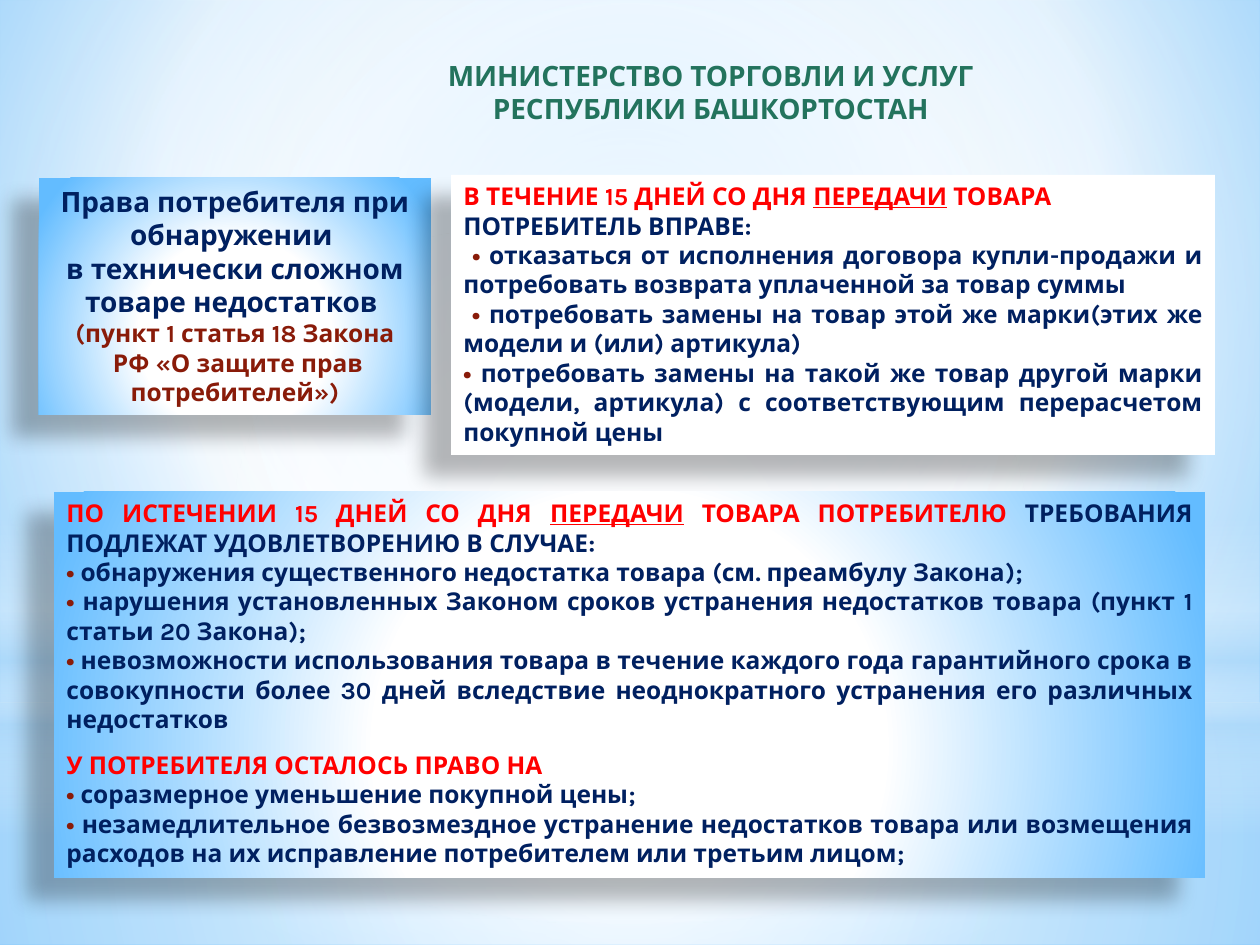
import pptx
import pptx.dml.color
import pptx.enum.shapes
import pptx.enum.text
import pptx.oxml
import pptx.oxml.ns
import pptx.util
from lxml import etree

PX = 914400 / 126
FONT = "Karla"
COLORS = {"white": "FFFFFF", "navy": "002060", "red": "FF0000", "brown": "891B09",
          "green": "23735D", "sky": "63BCFF", "mist": "B4DCFA",
          "bg_light": "9ED5FF", "bg_deep": "5BB9FF"}
ALIGN = pptx.enum.text.PP_ALIGN
SHAPE = pptx.enum.shapes.MSO_SHAPE
qn = pptx.oxml.ns.qn
CENTER = (50, 50, 50, 50)
PANEL_STOPS = [(0, "white", 100), (42, "white", 100), (100, "sky", 100)]
PANEL_FOCUS = (24, 44, 24, 12)


def px(n):
    return round(n * PX)


def rgb(name):
    return pptx.dml.color.RGBColor.from_string(COLORS[name])


def set_gradient(props, stops, focus=None):
    """Swap the empty fill for a gradient: circular around focus, else top to bottom."""
    grad = etree.Element(qn("a:gradFill"), rotWithShape="1")
    stop_list = etree.SubElement(grad, qn("a:gsLst"))
    for pos, color, opacity in stops:
        gs = etree.SubElement(stop_list, qn("a:gs"), pos=str(pos * 1000))
        clr = etree.SubElement(gs, qn("a:srgbClr"), val=COLORS[color])
        if opacity < 100:
            etree.SubElement(clr, qn("a:alpha"), val=str(opacity * 1000))
    if focus:
        circle = etree.SubElement(grad, qn("a:path"), path="circle")
        sides = {side: str(n * 1000) for side, n in zip("ltrb", focus)}
        etree.SubElement(circle, qn("a:fillToRect"), **sides)
    else:
        etree.SubElement(grad, qn("a:lin"), ang="5400000", scaled="0")
    props.replace(props.find(qn("a:noFill")), grad)


def add_plain(s, kind, box):
    sp = s.shapes.add_shape(kind, *map(px, box))
    sp.shadow.inherit = False
    sp.fill.background()
    sp.line.fill.background()
    return sp


def add_shadow(sp):
    effects = sp.element.spPr.find(qn("a:effectLst"))
    shadow = etree.SubElement(effects, qn("a:outerShdw"), blurRad="150000", dist="250000",
                              dir="8460000", algn="tr", rotWithShape="0")
    clr = etree.SubElement(shadow, qn("a:srgbClr"), val="000000")
    etree.SubElement(clr, qn("a:alpha"), val="28000")


def fill_background(s):
    s.background.fill.background()
    set_gradient(s.element.find(".//" + qn("p:bgPr")),
                 [(0, "bg_light", 100), (60, "white", 100), (100, "bg_deep", 100)],
                 (20, 10, 20, 60))


def add_backdrop(s, box):
    x, y, w, h = box
    horizon = 703
    layers = [
        (SHAPE.RECTANGLE, (x, y + horizon, w, h - horizon),
         [(0, "white", 91), (37, "white", 76), (100, "mist", 79)], CENTER),
        (SHAPE.RECTANGLE, (x, y, w, horizon),
         [(0, "white", 89), (48, "white", 62), (100, "mist", 79)], CENTER),
        (SHAPE.RECTANGLE, (x, y + 519, w, 315),
         [(0, "white", 0), (29, "white", 30), (45, "mist", 40),
          (55, "white", 26), (65, "mist", 60), (100, "white", 0)], None),
        (SHAPE.OVAL, (x, y + 220, w, horizon), [(0, "white", 100), (56, "white", 0)], CENTER),
    ]
    for kind, area, stops, focus in layers:
        set_gradient(add_plain(s, kind, area).element.spPr, stops, focus)


def write(tf, paragraphs):
    """Each paragraph is (size, alignment, space before, runs of (text, colour[, underlined]))."""
    tf.word_wrap = True
    tf.vertical_anchor = pptx.enum.text.MSO_ANCHOR.TOP
    for i, (size, align, before, runs) in enumerate(paragraphs):
        p = tf.add_paragraph() if i else tf.paragraphs[0]
        p.alignment = align
        p.line_spacing = 1.0
        p.space_before = pptx.util.Pt(before)
        p.font.size = pptx.util.Pt(size)
        p.font.name = FONT
        p.font.bold = True
        for text, color, *underlined in runs:
            r = p.add_run()
            r.text = text
            r.font.color.rgb = rgb(color)
            if underlined:
                r.font.underline = True


def add_title(s, box, lines):
    title = s.shapes.title
    title.left, title.top, title.width, title.height = map(px, box)
    title.text_frame.auto_size = pptx.enum.text.MSO_AUTO_SIZE.NONE
    write(title.text_frame, [(16, ALIGN.CENTER, 0, [(t, "green")]) for t in lines])
    s.shapes.element.append(title.element)  # in front of the backdrop


def add_panel(s, box, paragraphs, gradient):
    sp = add_plain(s, SHAPE.RECTANGLE, box)
    if gradient:
        set_gradient(sp.element.spPr, PANEL_STOPS, PANEL_FOCUS)
    else:
        sp.fill.solid()
        sp.fill.fore_color.rgb = rgb("white")
    add_shadow(sp)
    write(sp.text_frame, paragraphs)
    sp.text_frame.auto_size = pptx.enum.text.MSO_AUTO_SIZE.SHAPE_TO_FIT_TEXT


def heading(before, align, *runs):
    return 14, align, before, runs


def bullet(text, mark="• "):
    return 14, ALIGN.JUSTIFY, 0, [(mark, "brown"), (text, "navy")]


TOPIC = [
    (16, ALIGN.CENTER, 0, [("Права потребителя при обнаружении ", "navy")]),
    (16, ALIGN.CENTER, 0, [("в технически сложном товаре недостатков ", "navy")]),
    (14, ALIGN.CENTER, 0, [("(пункт 1 статья 18 Закона", "brown")]),
    (14, ALIGN.CENTER, 0, [(" РФ «О защите прав потребителей»)", "brown")]),
]
WITHIN_15_DAYS = [
    heading(0, ALIGN.LEFT, ("В ТЕЧЕНИЕ 15 ДНЕЙ СО ДНЯ ", "red"), ("ПЕРЕДАЧИ", "red", True),
            (" ТОВАРА ", "red"), ("ПОТРЕБИТЕЛЬ ВПРАВЕ:", "navy")),
    bullet("отказаться от исполнения договора купли-продажи и потребовать возврата "
           "уплаченной за товар суммы", " • "),
    bullet("потребовать замены на товар этой же марки(этих же модели и (или) артикула)", " • "),
    bullet("потребовать замены на такой же товар другой марки (модели, артикула) "
           "с соответствующим перерасчетом покупной цены"),
]
AFTER_15_DAYS = [
    heading(0, ALIGN.JUSTIFY, ("ПО ИСТЕЧЕНИИ 15 ДНЕЙ СО ДНЯ ", "red"), ("ПЕРЕДАЧИ", "red", True),
            (" ТОВАРА ПОТРЕБИТЕЛЮ ", "red"),
            ("ТРЕБОВАНИЯ ПОДЛЕЖАТ УДОВЛЕТВОРЕНИЮ В СЛУЧАЕ:", "navy")),
    bullet("обнаружения существенного недостатка товара (см. преамбулу Закона);"),
    bullet("нарушения установленных Законом сроков устранения недостатков товара "
           "(пункт 1 статьи 20 Закона); "),
    bullet("невозможности использования товара в течение каждого года гарантийного срока "
           "в совокупности более 30 дней вследствие неоднократного устранения его "
           "различных недостатков"),
    heading(9.4, ALIGN.JUSTIFY, ("У ПОТРЕБИТЕЛЯ ОСТАЛОСЬ ПРАВО НА ", "red")),
    bullet("соразмерное уменьшение покупной цены;"),
    bullet("незамедлительное безвозмездное устранение недостатков товара или возмещения "
           "расходов на их исправление потребителем или третьим лицом;"),
]


def main():
    prs = pptx.Presentation()
    prs.slide_width, prs.slide_height = px(1260), px(945)
    s = prs.slides.add_slide(prs.slide_layouts[5])
    fill_background(s)
    add_backdrop(s, (0, 0, 1260, 945))
    add_panel(s, (39, 178, 392, 237), TOPIC, gradient=True)
    add_title(s, (237, 52, 955, 81),
              ["МИНИСТЕРСТВО ТОРГОВЛИ И УСЛУГ ", "РЕСПУБЛИКИ БАШКОРТОСТАН "])
    add_panel(s, (451, 175, 764, 280), WITHIN_15_DAYS, gradient=False)
    add_panel(s, (54, 492, 1151, 386), AFTER_15_DAYS, gradient=True)
    prs.save("out.pptx")


if __name__ == "__main__":
    main()
